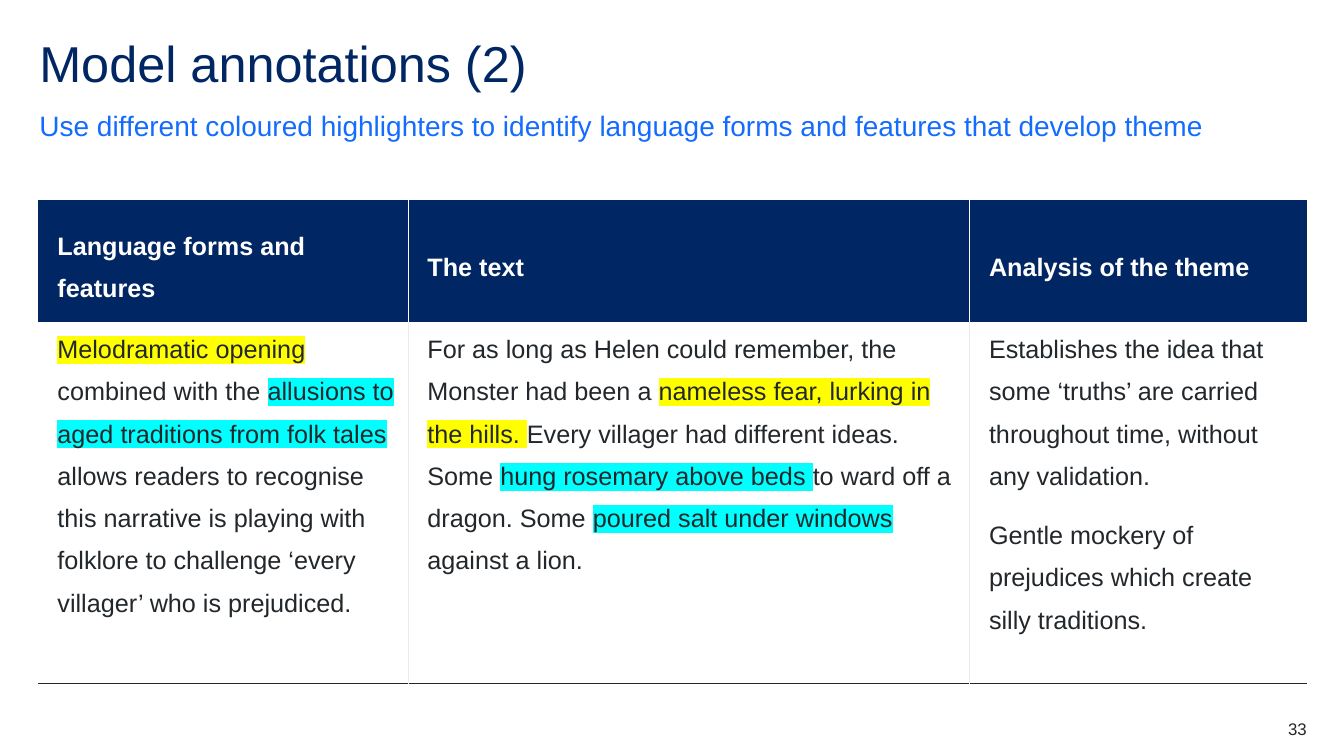
from lxml import etree
from pptx import Presentation
from pptx.dml.color import RGBColor
from pptx.enum.text import MSO_ANCHOR, PP_ALIGN
from pptx.oxml.ns import qn
from pptx.util import Inches, Pt

TOP, MIDDLE, BOTTOM = MSO_ANCHOR.TOP, MSO_ANCHOR.MIDDLE, MSO_ANCHOR.BOTTOM
LEFT, RIGHT = PP_ALIGN.LEFT, PP_ALIGN.RIGHT
NAVY, BLUE, INK, WHITE, GREY = "002664", "146CFD", "22272B", "FFFFFF", "EBEBEB"
YELLOW, CYAN = "FFFF00", "00FFFF"


def add_run(paragraph, text, size, color, bold=False, highlight=None):
    run = paragraph.add_run()
    run.text = text
    run.font.name = "Arial"
    run.font.size = Pt(size)
    run.font.bold = bold
    run.font.color.rgb = RGBColor.from_string(color)
    if highlight:
        marker = etree.Element(qn("a:highlight"))
        etree.SubElement(marker, qn("a:srgbClr"), val=highlight)
        run.font.fill  # the fill element precedes the highlight
        run._r.rPr.find(qn("a:solidFill")).addnext(marker)


def set_borders(cell, colors):
    """Draw 1 pt borders on the sides named in colors and clear the others."""
    properties = cell._tc.get_or_add_tcPr()
    for position, side in enumerate("LRTB"):
        line = etree.Element(qn(f"a:ln{side}"), w=str(Pt(1)))
        if side in colors:
            fill = etree.SubElement(line, qn("a:solidFill"))
            etree.SubElement(fill, qn("a:srgbClr"), val=colors[side])
        else:
            etree.SubElement(line, qn("a:noFill"))
        properties.insert(position, line)


presentation = Presentation()
presentation.slide_width = Inches(13.33)
presentation.slide_height = Inches(7.5)
slide = presentation.slides.add_slide(presentation.slide_layouts[6])

# Title, instruction and page number
labels = [
    ("Model annotations (2)", (0.39, 0.39, 12.56, 0.6), 36, NAVY, TOP, LEFT, 0.9),
    ("Use different coloured highlighters to identify language forms and features that develop theme",
     (0.39, 1.07, 12.56, 0.34), 20, BLUE, BOTTOM, LEFT, 1.5),
    ("33", (12.17, 7.13, 0.79, 0.2), 12, INK, TOP, RIGHT, 1),
]
for text, box, size, color, anchor, alignment, spacing in labels:
    frame = slide.shapes.add_textbox(*map(Inches, box)).text_frame
    frame.word_wrap = True
    frame.vertical_anchor = anchor
    frame.margin_left = frame.margin_right = frame.margin_top = frame.margin_bottom = 0
    paragraph = frame.paragraphs[0]
    paragraph.alignment = alignment
    paragraph.line_spacing = spacing
    add_run(paragraph, text, size, color)

# Annotation table: each cell is a list of paragraphs, each a list of (text, highlight)
headers = ["Language forms and features", "The text", "Analysis of the theme"]
features = [[
    ("Melodramatic opening ", YELLOW),
    ("combined with the ", None),
    ("allusions to aged traditions from folk tales ", CYAN),
    ("allows readers to recognise this narrative is playing with folklore to challenge "
     "‘every villager’ who is prejudiced.", None),
]]
story = [[
    ("For as long as Helen could remember, the Monster had been a ", None),
    ("nameless fear, lurking in the hills. ", YELLOW),
    ("Every villager had different ideas. Some ", None),
    ("hung rosemary above beds ", CYAN),
    ("to ward off a dragon. Some ", None),
    ("poured salt under windows ", CYAN),
    ("against a lion.", None),
]]
analysis = [
    [("Establishes the idea that some ‘truths’ are carried throughout time, without any validation.", None)],
    [("Gentle mockery of prejudices which create silly traditions.", None)],
]
rows = [[[[(header, None)]] for header in headers], [features, story, analysis]]

table = slide.shapes.add_table(2, 3, Inches(0.38), Inches(1.98), Inches(12.58), Inches(4.8)).table
table.first_row = table.horz_banding = False
for column, width in zip(table.columns, (3.67, 5.57, 3.34)):
    column.width = Inches(width)
for row, height in zip(table.rows, (1.21, 3.59)):
    row.height = Inches(height)

for row_index, row in enumerate(rows):
    is_header = row_index == 0
    for column_index, paragraphs in enumerate(row):
        cell = table.cell(row_index, column_index)
        cell.margin_left = cell.margin_right = Inches(0.07)
        cell.margin_top = cell.margin_bottom = 0
        cell.vertical_anchor = MIDDLE if is_header else TOP
        cell.fill.solid()
        cell.fill.fore_color.rgb = RGBColor.from_string(NAVY if is_header else WHITE)

        divider = WHITE if is_header else GREY
        borders = {} if is_header else {"B": INK}
        if column_index > 0:
            borders["L"] = divider
        if column_index < len(row) - 1:
            borders["R"] = divider
        set_borders(cell, borders)

        for index, runs in enumerate(paragraphs):
            frame = cell.text_frame
            paragraph = frame.add_paragraph() if index else frame.paragraphs[0]
            paragraph.line_spacing = 1.5
            paragraph.space_before = Pt(12 if is_header else 0)
            paragraph.space_after = Pt(12)
            paragraph._p.get_or_add_pPr().set("marL", str(Inches(0.12)))
            for text, highlight in runs:
                add_run(paragraph, text, 18, WHITE if is_header else INK, is_header, highlight)

presentation.save("out.pptx")
